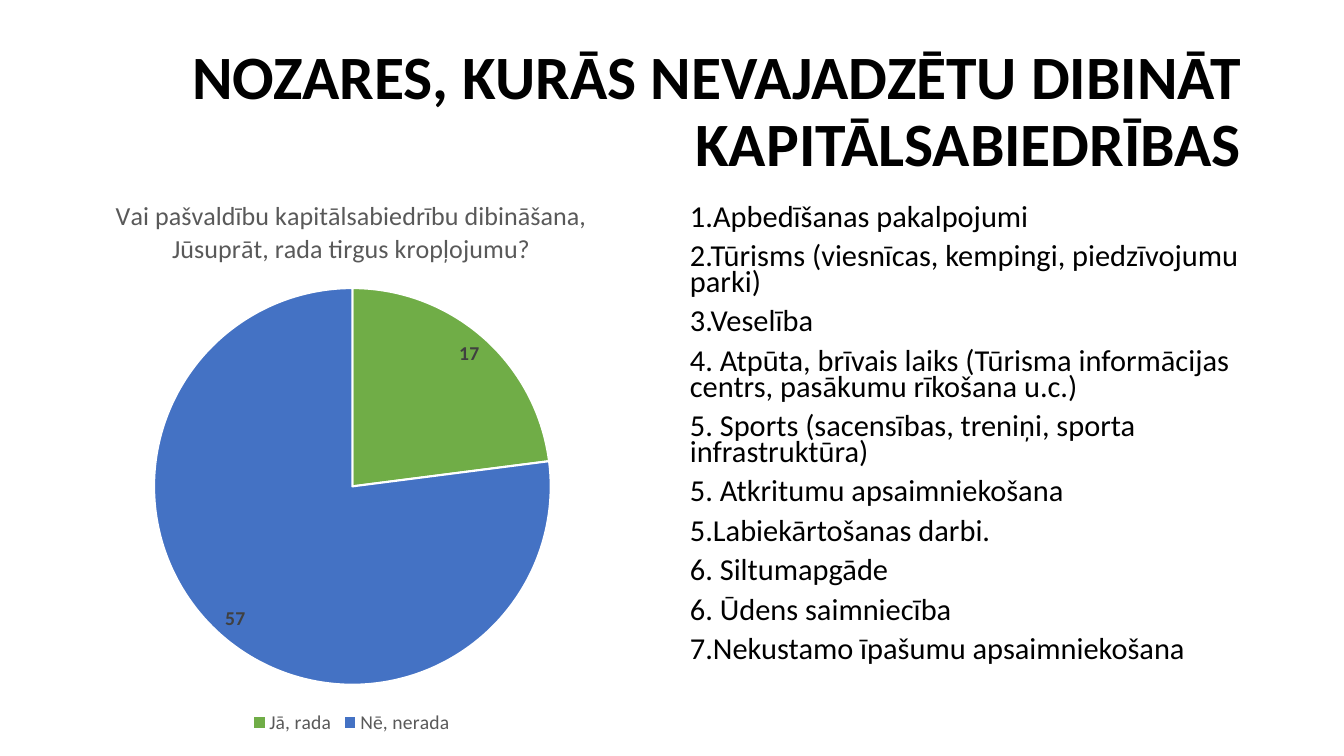
from lxml import etree
from pptx import Presentation
from pptx import util as u
from pptx.chart.data import CategoryChartData
from pptx.dml.color import RGBColor
from pptx.enum import chart as ch, text
from pptx.oxml.ns import qn

TITLE = "NOZARES, KURĀS NEVAJADZĒTU DIBINĀT KAPITĀLSABIEDRĪBAS"
QUESTION = "Vai pašvaldību kapitālsabiedrību dibināšana, Jūsuprāt, rada tirgus kropļojumu?"
ANSWERS = [("Jā, rada", 17, "yes"), ("Nē, nerada", 57, "no")]
SECTORS = [
    "1.Apbedīšanas pakalpojumi",
    "2.Tūrisms (viesnīcas, kempingi, piedzīvojumu parki)",
    "3.Veselība",
    "4. Atpūta, brīvais laiks (Tūrisma informācijas centrs, pasākumu rīkošana u.c.)",
    "5. Sports (sacensības, treniņi, sporta infrastruktūra)",
    "5. Atkritumu apsaimniekošana",
    "5.Labiekārtošanas darbi.",
    "6. Siltumapgāde",
    "6. Ūdens saimniecība",
    "7.Nekustamo īpašumu apsaimniekošana",
]
COLORS = {"text": "000000", "muted": "595959", "label": "404040",
          "yes": "70AD47", "no": "4472C4", "edge": "FFFFFF"}
FONT = "Calibri"
PX = 914400 / 100.8
TITLE_BOX = (93, 40, 1159, 146)
CHART_BOX = (43, 176, 617, 563)
PIE_BOX = (154, 288, 397, 397)
LIST_BOX = (680, 202, 572, 480)


def emu(box):
    return [u.Emu(round(v * PX)) for v in box]


def rgb(name):
    return RGBColor.from_string(COLORS[name])


def style(font, size, color, bold=False):
    font.name, font.size, font.bold = FONT, u.Pt(size), bold
    font.color.rgb = rgb(color)


def add_text(s, box, lines, size, spacing, bold=False, before=0,
             align=text.PP_ALIGN.LEFT, anchor=text.MSO_ANCHOR.TOP):
    tf = s.shapes.add_textbox(*emu(box)).text_frame
    tf.word_wrap = True
    tf.vertical_anchor = anchor
    tf.text = "\n".join(lines)
    for p in tf.paragraphs:
        p.alignment, p.line_spacing, p.space_before = align, spacing, u.Pt(before)
        style(p.runs[0].font, size, "text", bold)


def place_pie(chart):
    """Fix the pie's inner plot area as fractions of the chart frame."""
    left, top, width, height = CHART_BOX
    x, y, w, h = PIE_BOX
    area = chart.element.find(".//" + qn("c:plotArea"))
    for old in area.findall(qn("c:layout")):
        area.remove(old)
    layout = etree.Element(qn("c:layout"))
    area.insert(0, layout)
    manual = etree.SubElement(layout, qn("c:manualLayout"))
    values = [("layoutTarget", "inner"), ("xMode", "edge"), ("yMode", "edge"),
              ("x", (x - left) / width), ("y", (y - top) / height),
              ("w", w / width), ("h", h / height)]
    for tag, value in values:
        val = value if isinstance(value, str) else f"{value:.3f}"
        etree.SubElement(manual, qn(f"c:{tag}"), val=val)


def add_pie(s):
    data = CategoryChartData()
    data.categories = [name for name, _, _ in ANSWERS]
    data.add_series("Series 1", [count for _, count, _ in ANSWERS])
    chart = s.shapes.add_chart(ch.XL_CHART_TYPE.PIE, *emu(CHART_BOX), data).chart
    style(chart.font, 10, "text")

    chart.has_title = True
    tf = chart.chart_title.text_frame
    tf.text = QUESTION
    style(tf.paragraphs[0].runs[0].font, 18.6, "muted")

    chart.has_legend = True
    chart.legend.position = ch.XL_LEGEND_POSITION.BOTTOM
    chart.legend.include_in_layout = False
    style(chart.legend.font, 14, "muted")

    plot = chart.plots[0]
    plot.vary_by_categories = True
    plot.has_data_labels = True
    labels = plot.data_labels
    labels.show_value, labels.show_percentage = True, False
    labels.position = ch.XL_LABEL_POSITION.INSIDE_END
    style(labels.font, 14, "label", True)
    for i, (_, _, color) in enumerate(ANSWERS):
        fmt = plot.series[0].points[i].format
        fmt.fill.solid()
        fmt.fill.fore_color.rgb = rgb(color)
        fmt.line.color.rgb = rgb("edge")
        fmt.line.width = u.Pt(1.5)
    place_pie(chart)


prs = Presentation()
prs.slide_width, prs.slide_height = emu((1344, 756))
s = prs.slides.add_slide(prs.slide_layouts[6])
add_text(s, TITLE_BOX, [TITLE], 44, 0.9, bold=True,
         align=text.PP_ALIGN.RIGHT, anchor=text.MSO_ANCHOR.MIDDLE)
add_pie(s)
add_text(s, LIST_BOX, SECTORS, 21.7, 0.7, before=10)
prs.save("out.pptx")
